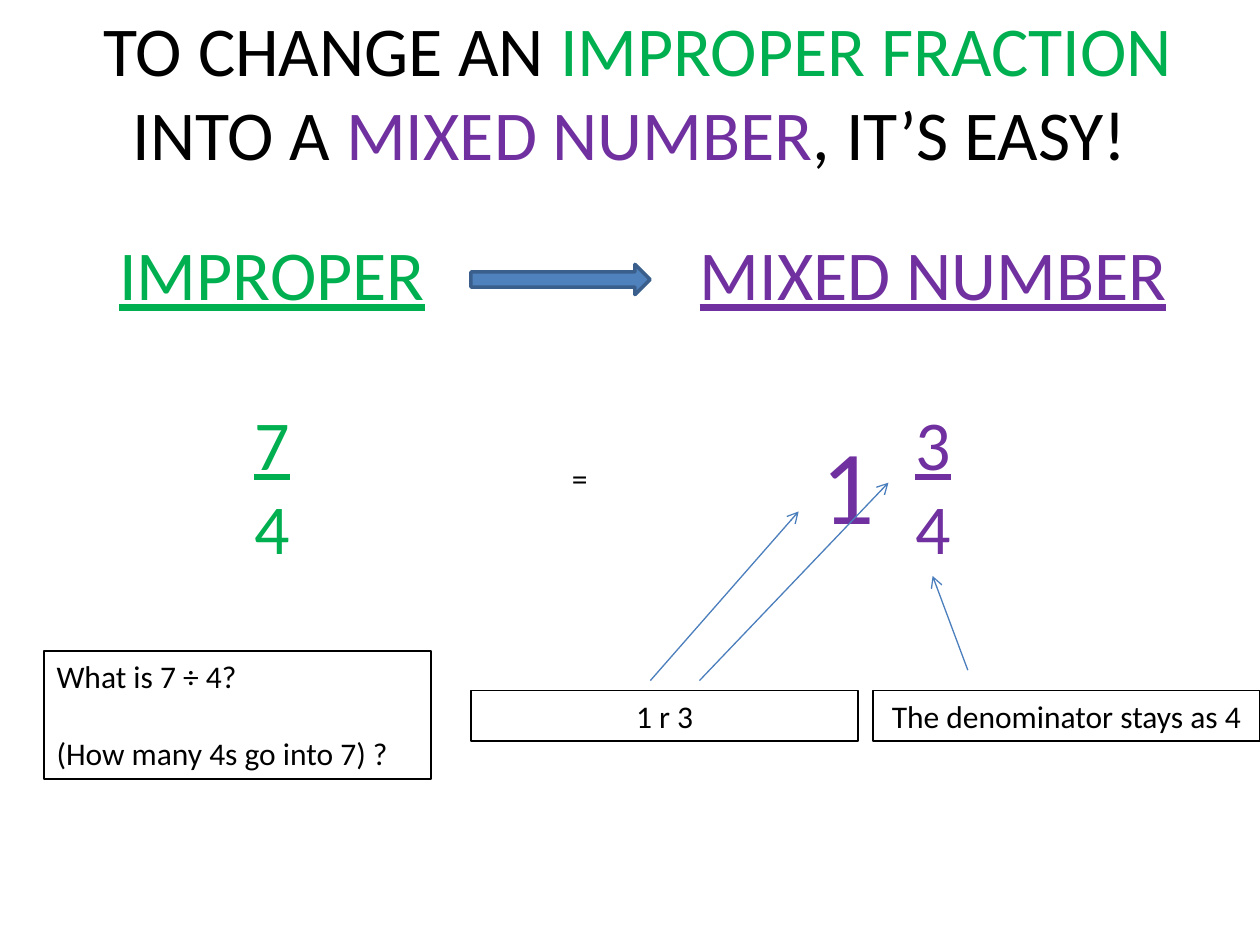
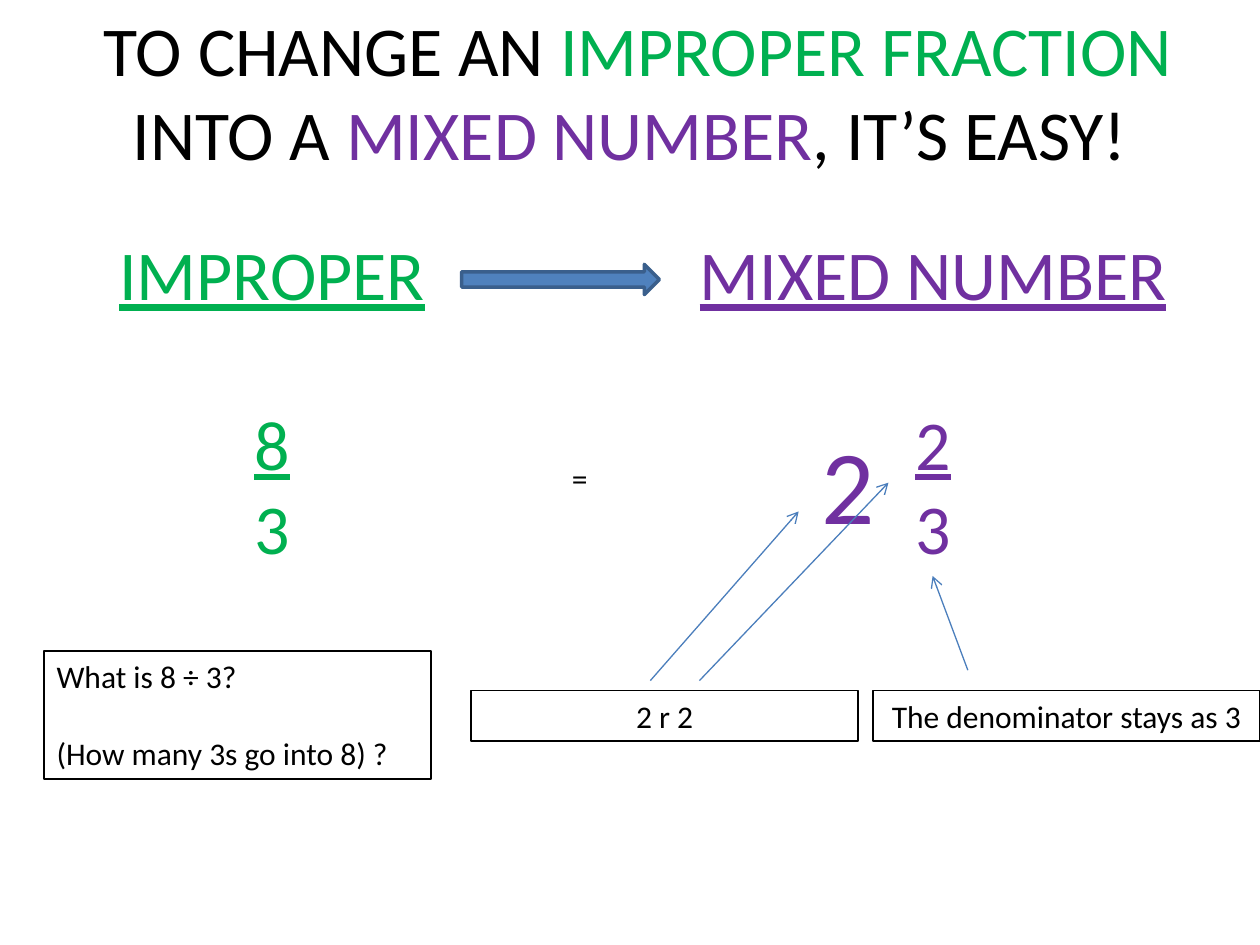
"""Build two slides that turn an improper fraction into a mixed number."""
from lxml.etree import SubElement
from pptx import Presentation
from pptx.dml.color import RGBColor
from pptx.enum.shapes import MSO_CONNECTOR, MSO_SHAPE
from pptx.enum.text import MSO_ANCHOR, MSO_AUTO_SIZE, PP_ALIGN
from pptx.oxml.ns import qn
from pptx.util import Cm, Pt

COLORS = {
    "text": "000000",
    "improper": "00B050",
    "mixed": "7030A0",
    "arrow": "4F81BD",
    "arrow_edge": "3A5F8C",
    "pointer": "4B7EBC",
}
FONT = "Calibri"
LINE_HEIGHT = 1.22
TITLE = [
    (" TO CHANGE AN ", "text"),
    ("IMPROPER FRACTION ", "improper"),
    ("INTO A ", "text"),
    ("MIXED NUMBER", "mixed"),
    (", IT’S EASY!", "text"),
]
POINTERS = [
    (13.11, 13.72, 16.1, 10.31),
    (14.1, 13.72, 17.91, 9.73),
    (19.51, 13.51, 18.8, 11.61),
]
ARROW_CENTER = 11.3


def add_text(p, text, size=18, color="text", underline=False, align=PP_ALIGN.CENTER, blank_before=0):
    p.alignment = align
    p.space_before = Pt(round(blank_before * size * LINE_HEIGHT))
    r = p.add_run()
    r.text = text
    r.font.name = FONT
    r.font.size = Pt(size)
    r.font.underline = underline
    r.font.color.rgb = RGBColor.from_string(COLORS[color])


def add_box(s, left, top, width, height, border=False):
    sp = s.shapes.add_textbox(Cm(left), Cm(top), Cm(width), Cm(height))
    sp.text_frame.word_wrap = True
    if border:
        sp.line.color.rgb = RGBColor.from_string(COLORS["text"])
        sp.line.width = Pt(1)
    return sp.text_frame


prs = Presentation()
prs.slide_width, prs.slide_height = Cm(25.4), Cm(19.05)

for numerator, denominator, arrow_width in [(7, 4, 3.61), (8, 3, 3.99)]:
    whole, remainder = divmod(numerator, denominator)
    s = prs.slides.add_slide(prs.slide_layouts[5])

    title = s.shapes.title
    title.left, title.top, title.width, title.height = Cm(0), Cm(0), Cm(25.4), Cm(3.68)
    tf = title.text_frame
    tf.word_wrap = True
    tf.auto_size = MSO_AUTO_SIZE.NONE
    tf.vertical_anchor = MSO_ANCHOR.TOP
    for text, color in TITLE:
        add_text(tf.paragraphs[0], text, size=40, color=color)

    for heading, color, top_number, left, width in [
        ("IMPROPER", "improper", numerator, 1.09, 8.79),
        ("MIXED NUMBER", "mixed", remainder, 13.31, 11),
    ]:
        tf = add_box(s, left, 4.52, width, 7.09)
        add_text(tf.paragraphs[0], heading, size=40, color=color, underline=True)
        add_text(tf.add_paragraph(), str(top_number), size=40, color=color, underline=True, blank_before=1)
        add_text(tf.add_paragraph(), str(denominator), size=40, color=color)

    tf = add_box(s, 10.49, 9.12, 2.39, 1.02)
    add_text(tf.paragraphs[0], "=")
    tf = add_box(s, 16.31, 8.33, 2.21, 2.82)
    add_text(tf.paragraphs[0], str(whole), size=60, color="mixed", align=PP_ALIGN.LEFT)

    tf = add_box(s, 0.89, 13.13, 7.8, 2.57, border=True)
    add_text(tf.paragraphs[0], f"What is {numerator} ÷ {denominator}?", align=PP_ALIGN.LEFT)
    add_text(tf.add_paragraph(), f"(How many {denominator}s go into {numerator}) ?",
             align=PP_ALIGN.LEFT, blank_before=1)

    for left, text in [
        (9.5, f"{whole} r {remainder}"),
        (17.6, f"The denominator stays as {denominator}"),
    ]:
        tf = add_box(s, left, 13.92, 7.8, 1.02, border=True)
        add_text(tf.paragraphs[0], text)

    for pointer in POINTERS:
        cxn = s.shapes.add_connector(MSO_CONNECTOR.STRAIGHT, *map(Cm, pointer))
        cxn.line.color.rgb = RGBColor.from_string(COLORS["pointer"])
        cxn.line.width = Pt(0.75)
        SubElement(cxn.line._get_or_add_ln(), qn("a:tailEnd"), type="arrow")
        SubElement(cxn._element.spPr, qn("a:effectLst"))

    sp = s.shapes.add_shape(MSO_SHAPE.RIGHT_ARROW, Cm(ARROW_CENTER - arrow_width / 2), Cm(5.33),
                            Cm(arrow_width), Cm(0.61))
    sp.shadow.inherit = False
    sp.fill.solid()
    sp.fill.fore_color.rgb = RGBColor.from_string(COLORS["arrow"])
    sp.line.color.rgb = RGBColor.from_string(COLORS["arrow_edge"])
    sp.line.width = Pt(2)

prs.save("out.pptx")
